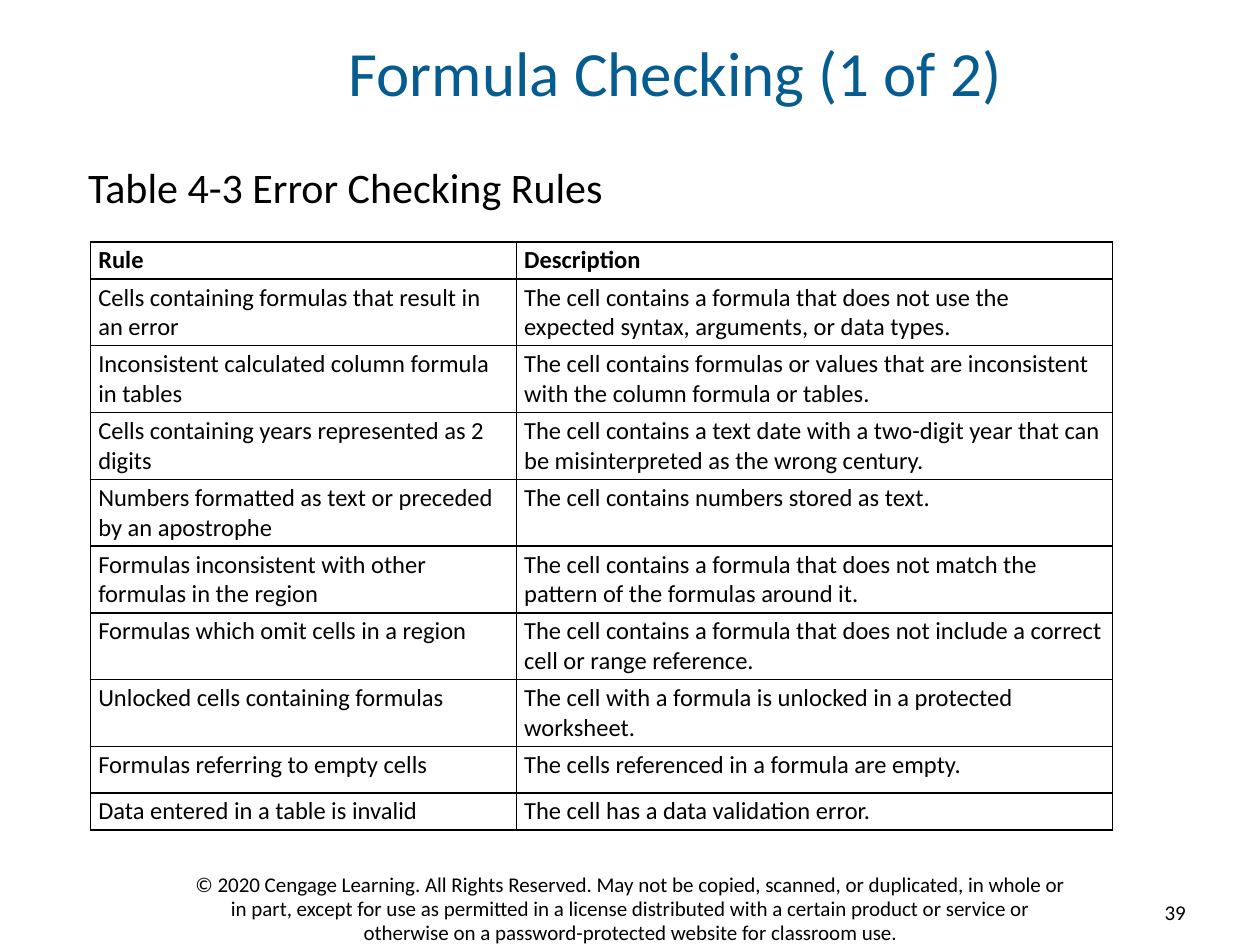
from typing import NamedTuple

from lxml import etree
from pptx import Presentation
from pptx import util as u
from pptx.dml.color import RGBColor
from pptx.enum import text as t
from pptx.oxml import ns

BLACK = RGBColor(0x00, 0x00, 0x00)
WHITE = RGBColor(0xFF, 0xFF, 0xFF)
BLUE = RGBColor(0x05, 0x5C, 0x91)
FONT = "Calibri"


class Box(NamedTuple):
    left: float
    top: float
    width: float
    height: float

    def dims(self) -> list:
        return [u.Inches(v) for v in self]


class Rule(NamedTuple):
    name: str
    about: str
    height: float = 0.53


RULES = [
    Rule("Rule", "Description", 0.29),
    Rule("Cells containing formulas that result in an error",
         "The cell contains a formula that does not use the expected syntax, "
         "arguments, or data types."),
    Rule("Inconsistent calculated column formula in tables",
         "The cell contains formulas or values that are inconsistent with the "
         "column formula or tables."),
    Rule("Cells containing years represented as 2 digits",
         "The cell contains a text date with a two-digit year that can be "
         "misinterpreted as the wrong century."),
    Rule("Numbers formatted as text or preceded by an apostrophe",
         "The cell contains numbers stored as text."),
    Rule("Formulas inconsistent with other formulas in the region",
         "The cell contains a formula that does not match the pattern of the "
         "formulas around it."),
    Rule("Formulas which omit cells in a region",
         "The cell contains a formula that does not include a correct cell or "
         "range reference."),
    Rule("Unlocked cells containing formulas",
         "The cell with a formula is unlocked in a protected worksheet."),
    Rule("Formulas referring to empty cells",
         "The cells referenced in a formula are empty.", 0.37),
    Rule("Data entered in a table is invalid",
         "The cell has a data validation error.", 0.29),
]
COPYRIGHT = (
    "© 2020 Cengage Learning. All Rights Reserved. May not be copied, scanned, "
    "or duplicated, in whole or in part, except for use as permitted in a "
    "license distributed with a certain product or service or otherwise on a "
    "password-protected website for classroom use.")


def write(frame, words: str, size: float, color: RGBColor = BLACK,
          bold: bool = False, align=t.PP_ALIGN.LEFT, pitch: float = 1.0) -> None:
    """Fill a text frame with one formatted paragraph."""
    para = frame.paragraphs[0]
    para.alignment, para.line_spacing = align, pitch
    para.space_before = u.Pt(0)
    run = para.add_run()
    run.text = words
    font = run.font
    font.name, font.size, font.bold = FONT, u.Pt(size), bold
    font.color.rgb = color


def place(shape, box: Box, anchor):
    """Move a placeholder and clear its margins."""
    shape.left, shape.top, shape.width, shape.height = box.dims()
    frame = shape.text_frame
    frame.margin_left = frame.margin_right = 0
    frame.margin_top = frame.margin_bottom = 0
    frame.vertical_anchor, frame.word_wrap = anchor, True
    frame.auto_size = t.MSO_AUTO_SIZE.NONE
    return frame


def label(slide, box: Box, words: str, align, anchor, wrap: bool = True,
          pitch: float = 1.0) -> None:
    frame = slide.shapes.add_textbox(*box.dims()).text_frame
    frame.word_wrap, frame.vertical_anchor = wrap, anchor
    write(frame, words, 12, align=align, pitch=pitch)


def border(cell) -> None:
    """Draw a thin black line on all four sides of a cell."""
    props = cell._tc.get_or_add_tcPr()
    for side in ("a:lnL", "a:lnR", "a:lnT", "a:lnB"):
        line = etree.SubElement(props, ns.qn(side), w=str(u.Pt(1)))
        fill = etree.SubElement(line, ns.qn("a:solidFill"))
        etree.SubElement(fill, ns.qn("a:srgbClr"), val=str(BLACK))


def fill_cell(cell, words: str, head: bool) -> None:
    border(cell)
    cell.fill.solid()
    cell.fill.fore_color.rgb = WHITE
    cell.margin_left = cell.margin_right = u.Inches(0.06)
    cell.margin_top = cell.margin_bottom = u.Inches(0.03)
    cell.vertical_anchor = t.MSO_ANCHOR.BOTTOM if head else t.MSO_ANCHOR.TOP
    write(cell.text_frame, words, 14, bold=head)


def draw_rules(slide, box: Box, widths: tuple) -> None:
    table = slide.shapes.add_table(len(RULES), len(widths), *box.dims()).table
    table.horz_banding = False
    for col, width in zip(table.columns, widths):
        col.width = u.Inches(width)
    for i, rule in enumerate(RULES):
        table.rows[i].height = u.Inches(rule.height)
        for j, words in enumerate((rule.name, rule.about)):
            fill_cell(table.cell(i, j), words, head=i == 0)


def main() -> None:
    deck = Presentation()
    deck.slide_width, deck.slide_height = u.Inches(10), u.Inches(7.5)
    slide = deck.slides.add_slide(deck.slide_layouts[1])

    # Footer: page number and copyright
    label(slide, Box(9.1, 7.09, 0.41, 0.3), "39", t.PP_ALIGN.RIGHT,
          t.MSO_ANCHOR.MIDDLE, wrap=False)
    label(slide, Box(1.42, 6.88, 7.17, 0.6), COPYRIGHT, t.PP_ALIGN.CENTER,
          t.MSO_ANCHOR.TOP, pitch=0.95)

    # Title
    title = place(slide.shapes.title, Box(0.83, 0.15, 9.06, 0.93),
                  t.MSO_ANCHOR.MIDDLE)
    write(title, "Formula Checking (1 of 2)", 36, BLUE,
          align=t.PP_ALIGN.CENTER, pitch=0.85)

    # Table caption, without a bullet
    body = place(slide.placeholders[1], Box(0.7, 1.31, 7.58, 0.38),
                 t.MSO_ANCHOR.TOP)
    props = body.paragraphs[0]._p.get_or_add_pPr()
    props.set("marL", "0")
    props.set("indent", "0")
    etree.SubElement(props, ns.qn("a:buNone"))
    write(body, "Table 4-3 Error Checking Rules", 24, pitch=0.95)

    # Table of rules
    draw_rules(slide, Box(0.72, 1.92, 8.11, 4.62), (3.38, 4.73))
    deck.save("out.pptx")


if __name__ == "__main__":
    main()
